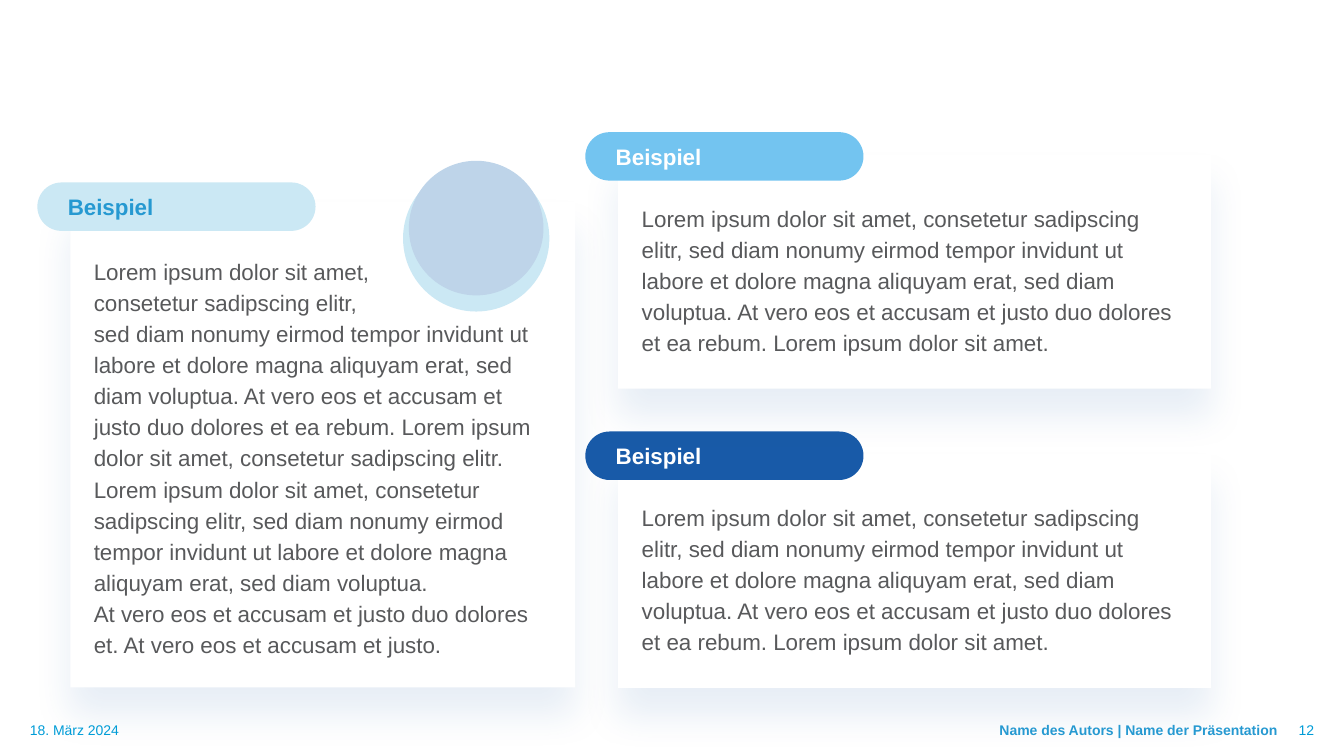
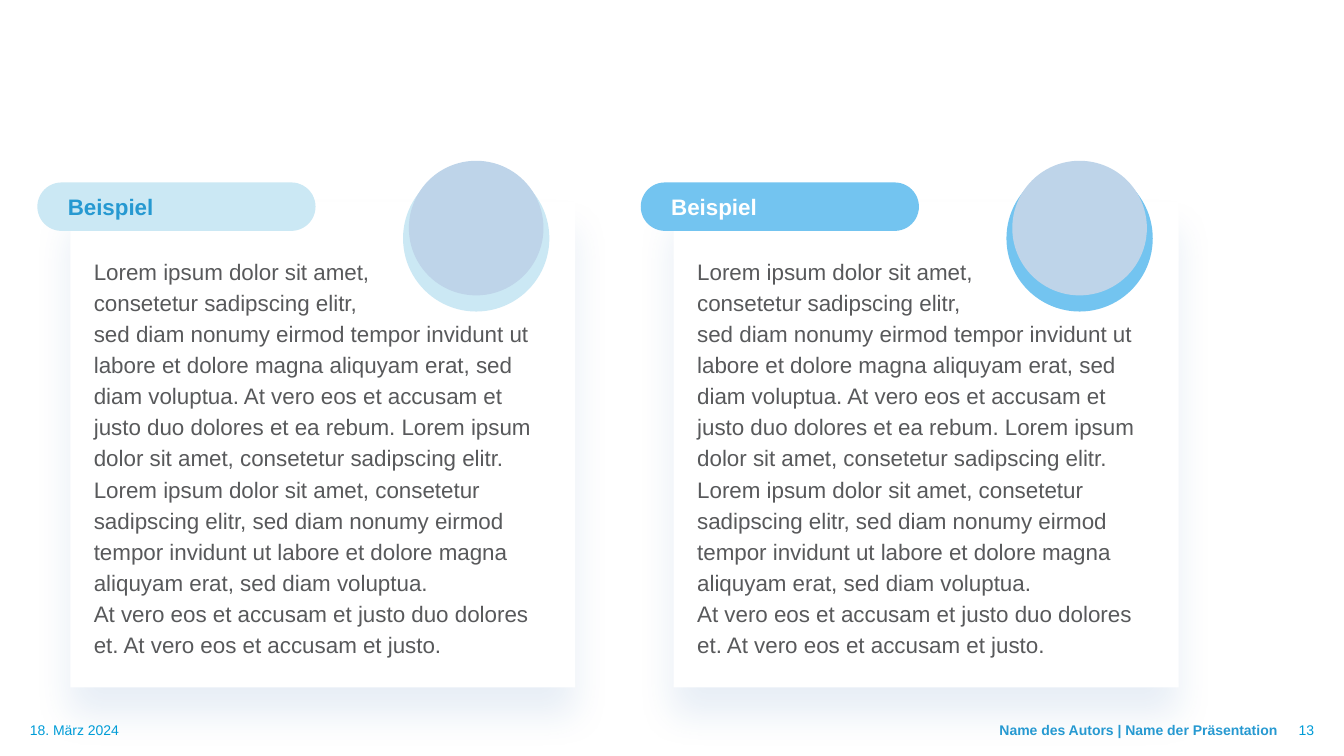
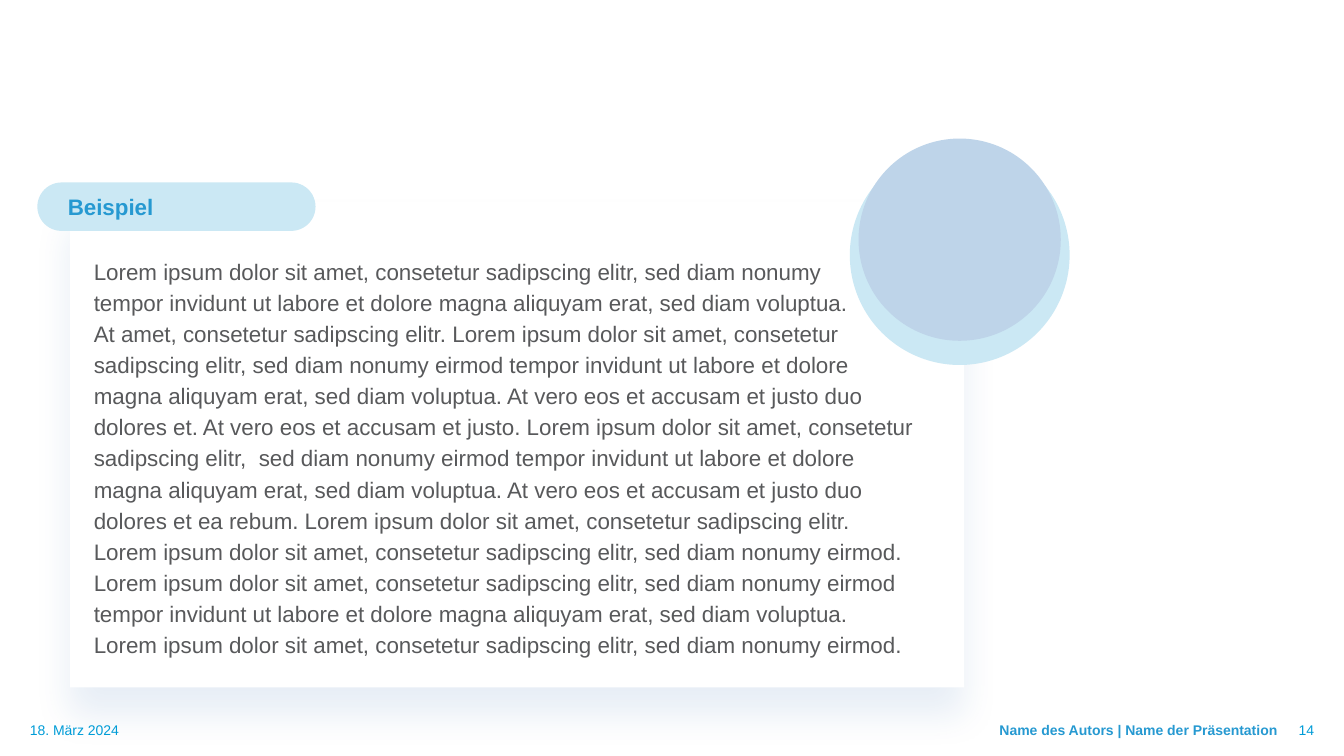
from pptx import Presentation
from pptx.dml.color import RGBColor as Rgb
from pptx.enum.shapes import MSO_SHAPE as Kind
from pptx.enum.text import MSO_ANCHOR as Anchor, PP_ALIGN as Align
from pptx.oxml import parse_xml
from pptx.oxml.ns import nsdecls, qn
from pptx.util import Pt

FONT = "Arial"
WHITE = Rgb(0xFF, 0xFF, 0xFF)
GREY = Rgb(0x58, 0x59, 0x5B)
CYAN = Rgb(0x00, 0x9C, 0xD7)
BLUE = Rgb(0x26, 0x99, 0xD1)
PALE = Rgb(0xCB, 0xE8, 0xF4)
SKY = Rgb(0x73, 0xC4, 0xF0)
NAVY = Rgb(0x18, 0x5A, 0xA8)
MIST = Rgb(0xBE, 0xD4, 0xE9)
SHADE = Rgb(0x19, 0x5A, 0xA7)

TALL = (13.7, 37.4, 23.8)
LOW = (15.8, 33.1, 15.8)

LOREM = "Lorem ipsum dolor sit amet"
ELITR = "consetetur sadipscing elitr"
START = f"{LOREM}, {ELITR}"
SED = "sed diam nonumy eirmod"
TEMPOR = ("tempor invidunt ut labore et dolore magna aliquyam erat, "
          "sed diam voluptua.")
VERO = "At vero eos et accusam et justo"
REBUM = f"{VERO} duo dolores et ea rebum."
CLOSE = f"{VERO} duo dolores et. {VERO}."

SHORT = [f"{START}, {SED} {TEMPOR} {REBUM} {LOREM}."]
LONG = [
    f"{LOREM},",
    f"{ELITR},",
    f"{SED} {TEMPOR} {REBUM} {START}. {START}, {SED} {TEMPOR}",
    CLOSE,
]
WIDE = [
    f"{START}, sed diam nonumy",
    TEMPOR,
    f"At amet, {ELITR}. {START}, {SED} {TEMPOR} {CLOSE} "
    f"{START},  {SED} {TEMPOR} {REBUM} {START}. {START}, {SED}. "
    f"{START}, {SED} {TEMPOR} {START}, {SED}.",
]


def write(shape, lines, size, ink, bold=False, align=Align.LEFT,
          anchor=Anchor.TOP, pad=(0, 0, 0, 0), pitch=None):
    frame = shape.text_frame
    frame.word_wrap = True
    frame.vertical_anchor = anchor
    (frame.margin_left, frame.margin_top,
     frame.margin_right, frame.margin_bottom) = map(Pt, pad)
    for i, line in enumerate(lines):
        para = frame.add_paragraph() if i else frame.paragraphs[0]
        para.alignment = align
        if pitch:
            para.line_spacing = Pt(pitch)
        run = para.add_run()
        run.text = line
        font = run.font
        font.name, font.size, font.bold = FONT, Pt(size), bold
        font.color.rgb = ink


def add_text(slide, box, lines, size, ink, **style):
    write(slide.shapes.add_textbox(*map(Pt, box)), lines, size, ink, **style)


def add_form(slide, kind, box, fill):
    form = slide.shapes.add_shape(kind, *map(Pt, box))
    form.shadow.inherit = False
    form.fill.solid()
    form.fill.fore_color.rgb = fill
    form.line.fill.background()
    return form


def add_shade(form):
    form.element.spPr.find(qn("a:effectLst")).append(parse_xml(
        f'<a:outerShdw {nsdecls("a")} blurRad="{Pt(26)}" dist="{Pt(20)}" '
        f'dir="{91 * 60000}" algn="t" rotWithShape="0"><a:srgbClr val="{SHADE}">'
        '<a:alpha val="10000"/></a:srgbClr></a:outerShdw>'))


def add_disc(slide, left, top, size, fill):
    inner = size * 0.92
    add_form(slide, Kind.OVAL, (left, top, size, size), fill)
    add_form(slide, Kind.OVAL,
             (left + size * 0.04, top - size * 0.03, inner, inner), MIST)


def add_card(slide, box, fill, ink, lines, form=TALL, wrap=35.3, disc=None):
    left, top, width, height = box
    lift, drop, foot = form
    add_shade(add_form(slide, Kind.RECTANGLE, box, WHITE))
    if disc:
        right, rise, size = disc
        add_disc(slide, left + width - right - size, top - rise, size, fill)
    add_text(slide, (left + 16.8, top + drop, width - wrap, height - drop - foot),
             lines, 16, GREY, pitch=22.2)
    badge = add_form(slide, Kind.ROUNDED_RECTANGLE,
                     (left - 23.5, top - lift, 198.7, 34.6), fill)
    badge.adjustments[0] = 0.5
    write(badge, ["Beispiel"], 16, ink, bold=True, anchor=Anchor.MIDDLE,
          pad=(16.7, 0, 0, 0))


def add_foot(slide, page):
    low = {"anchor": Anchor.BOTTOM}
    add_text(slide, (0, 516.2, 293.8, 22.3), ["18. März 2024"], 10, CYAN,
             pad=(21.3, 0, 0, 11.3), **low)
    add_text(slide, (588.3, 516.2, 324, 22.3),
             ["Name des Autors | Name der Präsentation"], 10, BLUE,
             bold=True, align=Align.RIGHT, pad=(0, 0, 0, 11.3), **low)
    add_text(slide, (912.3, 515.5, 47.7, 23), [str(page)], 10, CYAN,
             align=Align.RIGHT, pad=(0, 0, 21.3, 11.3), **low)


def add_tall(slide, left, fill, ink):
    add_card(slide, (left, 144, 360.7, 347), fill, ink, LONG,
             disc=(18.5, 26, 104.5))


def add_trio(slide):
    add_tall(slide, 50.2, PALE, BLUE)
    for top, fill in ((324, NAVY), (110.2, SKY)):
        add_card(slide, (441.6, top, 423.4, 167.4), fill, WHITE, SHORT, form=LOW)


def add_pair(slide):
    add_tall(slide, 50.2, PALE, BLUE)
    add_tall(slide, 481.2, SKY, WHITE)


def add_solo(slide):
    add_card(slide, (50.2, 144, 638.6, 347), PALE, BLUE, WIDE, wrap=51,
             disc=(-75.2, 40.3, 157))


def main():
    deck = Presentation()
    deck.slide_width, deck.slide_height = Pt(960), Pt(540)
    for page, build in enumerate((add_trio, add_pair, add_solo), 12):
        slide = deck.slides.add_slide(deck.slide_layouts[6])
        build(slide)
        add_foot(slide, page)
    deck.save("out.pptx")


if __name__ == "__main__":
    main()
